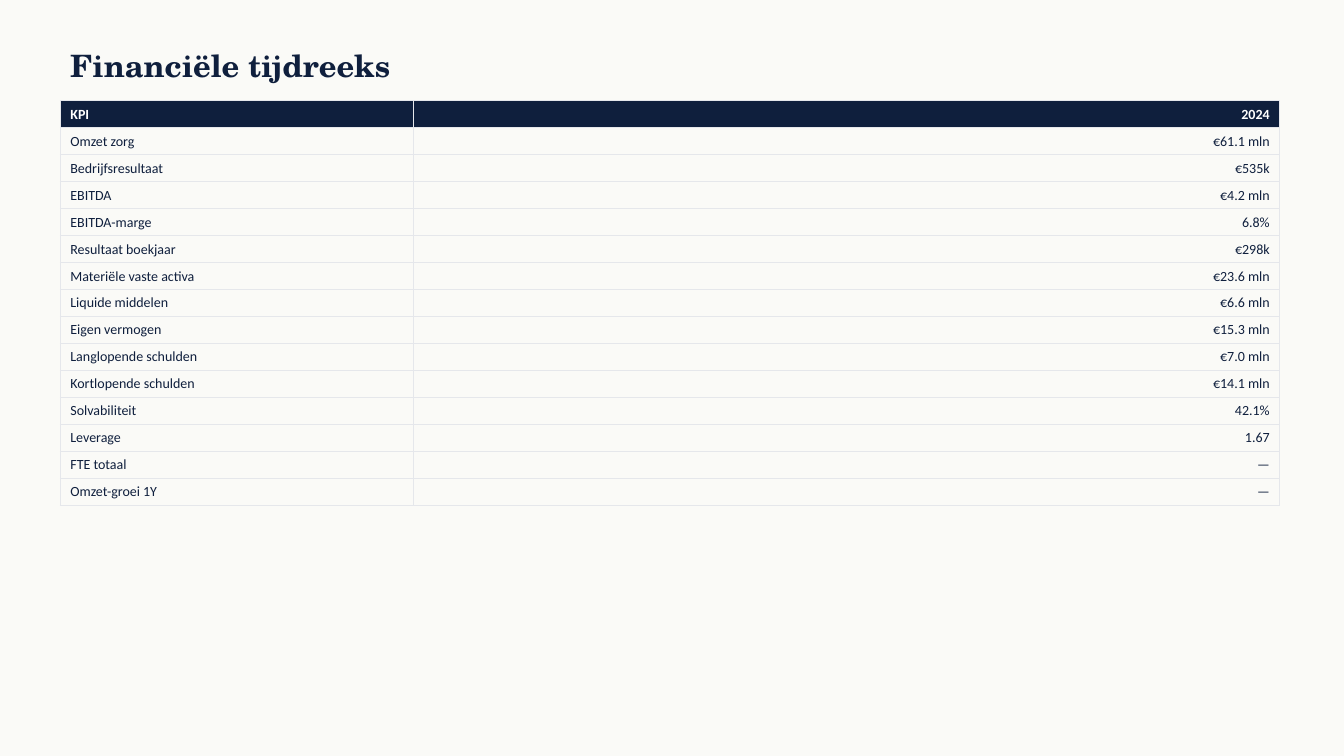
from lxml.etree import SubElement
from pptx import Presentation
from pptx.dml.color import RGBColor
from pptx.enum.text import MSO_ANCHOR as Anchor, PP_ALIGN as Align
from pptx.oxml.ns import qn
from pptx.util import Cm, Pt

NAVY, WHITE, GRID, PAPER = "0F1F3D", "FFFFFF", "E5E7EB", "FAFAF7"
COLUMNS = (8.89, 21.84)
ROW_HEIGHT = 0.68
KPIS = [
    ("KPI", "2024"),
    ("Omzet zorg", "€61.1 mln"),
    ("Bedrijfsresultaat", "€535k"),
    ("EBITDA", "€4.2 mln"),
    ("EBITDA-marge", "6.8%"),
    ("Resultaat boekjaar", "€298k"),
    ("Materiële vaste activa", "€23.6 mln"),
    ("Liquide middelen", "€6.6 mln"),
    ("Eigen vermogen", "€15.3 mln"),
    ("Langlopende schulden", "€7.0 mln"),
    ("Kortlopende schulden", "€14.1 mln"),
    ("Solvabiliteit", "42.1%"),
    ("Leverage", "1.67"),
    ("FTE totaal", "—"),
    ("Omzet-groei 1Y", "—"),
]


def rgb(value):
    """Turn a hex string into a colour."""
    return RGBColor.from_string(value)


def write(tf, text, font="Calibri", size=10, color=NAVY, bold=False, align=Align.LEFT):
    """Put one formatted run in a text frame."""
    p = tf.paragraphs[0]
    p.alignment = align
    r = p.add_run()
    r.text = text
    r.font.name, r.font.size, r.font.bold = font, Pt(size), bold
    r.font.color.rgb = rgb(color)


def add_borders(cell, color=GRID, width=0.5):
    """Draw a thin line on all four sides of a cell."""
    props = cell._tc.get_or_add_tcPr()
    for side in ("a:lnL", "a:lnR", "a:lnT", "a:lnB"):
        line = SubElement(props, qn(side), w=str(Pt(width)))
        fill = SubElement(line, qn("a:solidFill"))
        SubElement(fill, qn("a:srgbClr"), val=color)


def add_title(s, text):
    """Add the slide heading."""
    sp = s.shapes.add_textbox(Cm(1.52), Cm(1.02), Cm(30.48), Cm(1.27))
    tf = sp.text_frame
    tf.word_wrap = True
    tf.vertical_anchor = Anchor.MIDDLE
    write(tf, text, font="TeX Gyre Schola", size=22, bold=True)


def add_kpi_table(s, rows):
    """Add the table with a dark header row and right-aligned values."""
    frame = s.shapes.add_table(len(rows), len(COLUMNS), Cm(1.52), Cm(2.54),
                               Cm(sum(COLUMNS)), Cm(ROW_HEIGHT * len(rows)))
    table = frame.table
    table.first_row = table.horz_banding = False
    for column, width in zip(table.columns, COLUMNS):
        column.width = Cm(width)
    for i, values in enumerate(rows):
        table.rows[i].height = Cm(ROW_HEIGHT)
        header = i == 0
        for j, text in enumerate(values):
            cell = table.cell(i, j)
            add_borders(cell)
            if header:
                cell.fill.solid()
                cell.fill.fore_color.rgb = rgb(NAVY)
            else:
                cell.fill.background()
            write(cell.text_frame, text, color=WHITE if header else NAVY,
                  bold=header, align=Align.RIGHT if j else Align.LEFT)


def main():
    """Build and save the slide."""
    prs = Presentation()
    prs.slide_width, prs.slide_height = Cm(33.87), Cm(19.05)
    s = prs.slides.add_slide(prs.slide_layouts[6])
    s.background.fill.solid()
    s.background.fill.fore_color.rgb = rgb(PAPER)
    add_title(s, "Financiële tijdreeks")
    add_kpi_table(s, KPIS)
    prs.save("out.pptx")


if __name__ == "__main__":
    main()
